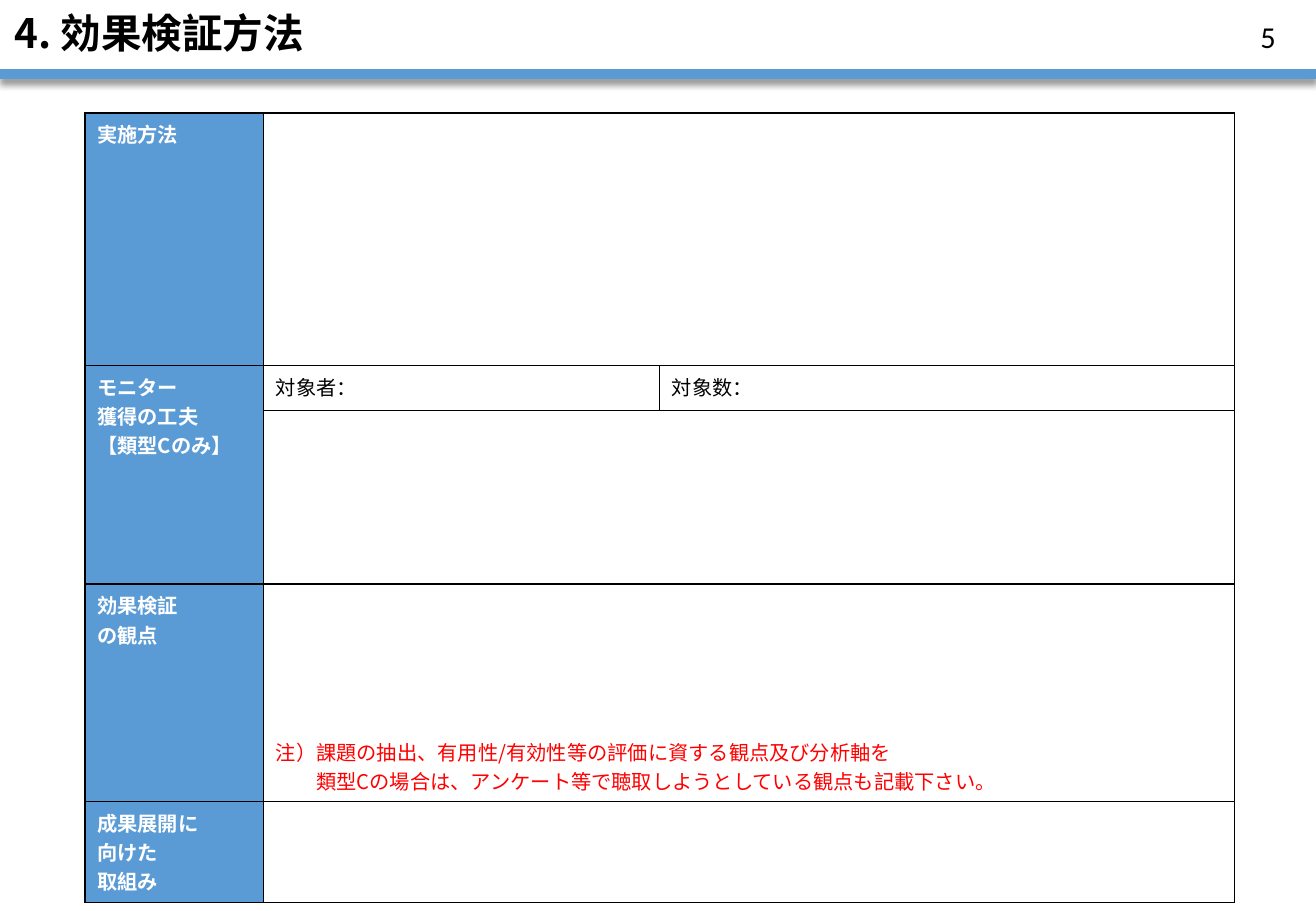
from lxml.etree import SubElement
from pptx import Presentation
from pptx.dml.color import RGBColor
from pptx.enum.shapes import MSO_CONNECTOR
from pptx.enum.text import MSO_ANCHOR, PP_ALIGN
from pptx.oxml import parse_xml
from pptx.oxml.ns import nsdecls, qn
from pptx.util import Inches, Pt

JAPANESE = "Noto Sans CJK JP"
BLUE, BLACK, WHITE, RED = "5B9BD5", "000000", "FFFFFF", "FF0000"
COLUMNS = [1.47, 3.26, 4.73]
ROWS = [2.08, 0.37, 1.43, 1.79, 0.83]
MERGES = [((0, 1), (0, 2)), ((1, 0), (2, 0)), ((2, 1), (2, 2)),
          ((3, 1), (3, 2)), ((4, 1), (4, 2))]
HEADINGS = {
    0: ["実施方法"],
    1: ["モニター", "獲得の工夫", "【類型Cのみ】"],
    3: ["効果検証", "の観点"],
    4: ["成果展開に", "向けた", "取組み"],
}
NOTE = ["注）課題の抽出、有用性/有効性等の評価に資する観点及び分析軸を",
        "類型Cの場合は、アンケート等で聴取しようとしている観点も記載下さい。"]


def rgb(color):
    """Turn a hex string into a colour."""
    return RGBColor.from_string(color)


def write(frame, lines, size, color, bold=False, font=JAPANESE):
    """Fill a text frame with one formatted paragraph per line."""
    frame.text = "\n".join(lines)
    for paragraph in frame.paragraphs:
        style = paragraph.font
        style.size, style.bold, style.name = Pt(size), bold, font
        style.color.rgb = rgb(color)
        properties = paragraph._p.pPr.find(qn("a:defRPr"))
        SubElement(properties, qn("a:ea")).set("typeface", font)


def add_title(slide, text):
    """Place the slide title across the top."""
    title = slide.shapes.title
    title.left, title.top = Inches(0), Inches(0)
    title.width, title.height = Inches(10.83), Inches(0.59)
    frame = title.text_frame
    write(frame, [text], 24, BLACK, bold=True)
    frame.vertical_anchor = MSO_ANCHOR.MIDDLE
    frame.margin_left = frame.margin_right = Inches(0.12)
    frame.margin_top = frame.margin_bottom = Inches(0.04)
    frame.paragraphs[0].alignment = PP_ALIGN.LEFT
    frame.paragraphs[0].line_spacing = 0.9


def add_title_rule(slide):
    """Draw the shadowed blue rule under the title."""
    rule = slide.shapes.add_connector(
        MSO_CONNECTOR.STRAIGHT, Inches(0), Inches(0.61), Inches(10.83), Inches(0.61))
    rule.line.color.rgb = rgb(BLUE)
    rule.line.width = Pt(6)
    rule._element.spPr.append(parse_xml(
        f'<a:effectLst {nsdecls("a")}><a:outerShdw blurRad="{Pt(4)}" dist="{Pt(3)}" '
        f'dir="5400000" rotWithShape="0"><a:srgbClr val="{BLACK}">'
        '<a:alpha val="40000"/></a:srgbClr></a:outerShdw></a:effectLst>'))


def add_page_number(slide, number):
    """Write the page number at the top right."""
    box = slide.shapes.add_textbox(
        Inches(10.24), Inches(0.14), Inches(0.39), Inches(0.31))
    frame = box.text_frame
    write(frame, [number], 18, BLACK, font="Calibri")
    frame.word_wrap = True
    frame.vertical_anchor = MSO_ANCHOR.MIDDLE
    frame.margin_left = frame.margin_right = Inches(0)
    frame.paragraphs[0].alignment = PP_ALIGN.CENTER


def format_cell(cell, color):
    """Give a cell its fill and thin black borders."""
    properties = cell._tc.get_or_add_tcPr()
    for side in ("lnL", "lnR", "lnT", "lnB"):
        properties.append(parse_xml(
            f'<a:{side} {nsdecls("a")} w="{Pt(1)}"><a:solidFill>'
            f'<a:srgbClr val="{BLACK}"/></a:solidFill></a:{side}>'))
    cell.fill.solid()
    cell.fill.fore_color.rgb = rgb(color)


def add_form(slide):
    """Build the form table with its headings, prompts and note."""
    form = slide.shapes.add_table(
        len(ROWS), len(COLUMNS), Inches(0.7), Inches(0.93),
        Inches(sum(COLUMNS)), Inches(sum(ROWS))).table
    for column, width in zip(form.columns, COLUMNS):
        column.width = Inches(width)
    for row, height in zip(form.rows, ROWS):
        row.height = Inches(height)
        for index, cell in enumerate(row.cells):
            format_cell(cell, WHITE if index else BLUE)
    for first, last in MERGES:
        form.cell(*first).merge(form.cell(*last))

    for row, lines in HEADINGS.items():
        write(form.cell(row, 0).text_frame, lines, 12, WHITE, bold=True)
    for column, prompt in enumerate(["対象者：", "対象数："], start=1):
        write(form.cell(1, column).text_frame, [prompt], 12, BLACK)
    note = form.cell(3, 1)
    write(note.text_frame, NOTE, 12, RED)
    note.vertical_anchor = MSO_ANCHOR.BOTTOM
    note.text_frame.paragraphs[1]._p.pPr.set("marL", str(Pt(24)))


def main():
    """Build and save the slide."""
    deck = Presentation()
    deck.slide_width, deck.slide_height = Inches(10.83), Inches(7.5)
    slide = deck.slides.add_slide(deck.slide_layouts[5])
    add_title_rule(slide)
    add_title(slide, "4. 効果検証方法")
    add_page_number(slide, "5")
    add_form(slide)
    deck.save("out.pptx")


if __name__ == "__main__":
    main()
